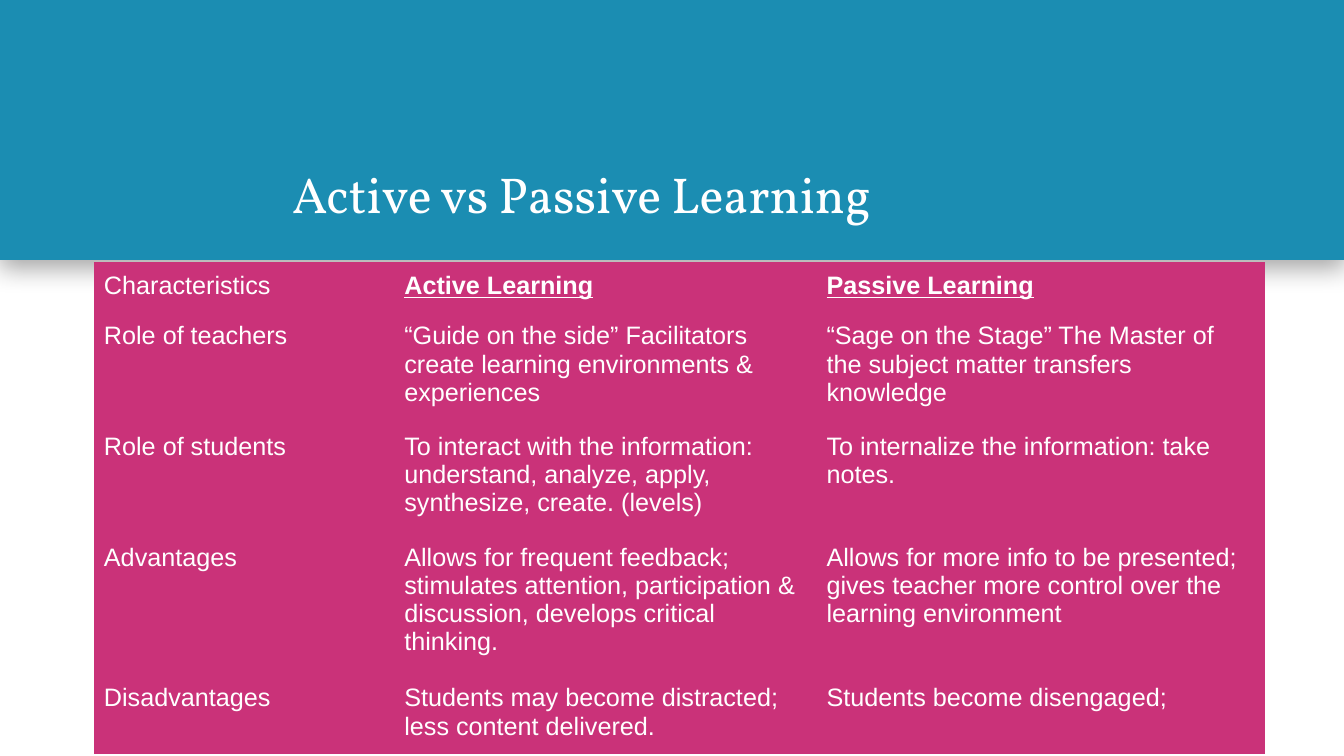
"""Build a slide comparing active and passive learning in a table."""
import lxml.etree
import pptx
import pptx.dml.color
import pptx.enum.shapes
import pptx.enum.text
import pptx.oxml
import pptx.oxml.ns
import pptx.util

Cm = pptx.util.Cm
Pt = pptx.util.Pt
RGBColor = pptx.dml.color.RGBColor

BLUE = RGBColor(0x1B, 0x8D, 0xB2)
PINK = RGBColor(0xCA, 0x32, 0x79)
WHITE = RGBColor(0xFF, 0xFF, 0xFF)

SLIDE_W, SLIDE_H = Cm(33.87), Cm(19.05)
COLUMN_WIDTHS = [7.57, 10.64, 11.3]
ROW_HEIGHTS = [1.2, 2.6, 2.6, 3.3, 1.9]
ROWS = [
    ("Characteristics", "Active Learning", "Passive Learning"),
    ("Role of teachers",
     "“Guide on the side” Facilitators create learning environments & experiences",
     "“Sage on the Stage” The Master of the subject matter transfers knowledge"),
    ("Role of students",
     "To interact with the information: understand, analyze, apply, synthesize, create. (levels)",
     "To internalize the information: take notes."),
    ("Advantages",
     "Allows for frequent feedback; stimulates attention, participation & discussion, "
     "develops critical thinking.",
     "Allows for more info to be presented; gives teacher more control over the "
     "learning environment"),
    ("Disadvantages",
     "Students may become distracted; less content delivered.",
     "Students become disengaged;"),
]


def style_run(r, name, size):
    """Give a run its font, size and white colour."""
    r.font.name = name
    r.font.size = Pt(size)
    r.font.color.rgb = WHITE


def add_shadow(sp):
    """Put a soft shadow below a shape."""
    sp.shadow.inherit = False
    effects = sp._element.spPr.find(pptx.oxml.ns.qn("a:effectLst"))
    effects.append(pptx.oxml.parse_xml(
        f'<a:outerShdw {pptx.oxml.ns.nsdecls("a")} blurRad="{Pt(18)}" dist="{Pt(5)}" '
        'dir="5400000" algn="t" rotWithShape="0"><a:srgbClr val="000000">'
        '<a:alpha val="35000"/></a:srgbClr></a:outerShdw>'))


def add_header(s, left, top, width, height):
    """Draw the header band with its title at the bottom."""
    sp = s.shapes.add_shape(
        pptx.enum.shapes.MSO_SHAPE.RECTANGLE, left, top, width, height)
    sp.fill.solid()
    sp.fill.fore_color.rgb = BLUE
    sp.line.fill.background()
    add_shadow(sp)

    box = s.shapes.add_textbox(
        left + Cm(7.11), top + Cm(1.12), width - Cm(9.43), height - Cm(1.88))
    tf = box.text_frame
    tf.word_wrap = True
    tf.vertical_anchor = pptx.enum.text.MSO_ANCHOR.BOTTOM
    p = tf.paragraphs[0]
    p.text = "Active vs Passive Learning"
    p.line_spacing = 0.9
    style_run(p.runs[0], "Vollkorn", 36)


def add_comparison(s, left, top, width, height):
    """Draw the comparison table."""
    table = s.shapes.add_table(
        len(ROWS), len(COLUMN_WIDTHS), left, top, width, height).table
    for column, column_width in zip(table.columns, COLUMN_WIDTHS):
        column.width = Cm(column_width)
    for i, (row, texts) in enumerate(zip(table.rows, ROWS)):
        row.height = Cm(ROW_HEIGHTS[i])
        for j, (cell, text) in enumerate(zip(row.cells, texts)):
            cell.fill.solid()
            cell.fill.fore_color.rgb = PINK
            cell.margin_left = cell.margin_right = Cm(0.25)
            cell.margin_top = cell.margin_bottom = Cm(0.25)
            cell.text_frame.text = text
            r = cell.text_frame.paragraphs[0].runs[0]
            style_run(r, "Arial", 18)
            r.font.bold = r.font.underline = i == 0 and j > 0
            add_borders(cell)


def add_borders(cell):
    """Turn off the borders of a cell."""
    tcPr = cell._tc.get_or_add_tcPr()
    for i, side in enumerate(("lnL", "lnR", "lnT", "lnB")):
        ln = lxml.etree.Element(pptx.oxml.ns.qn(f"a:{side}"))
        lxml.etree.SubElement(ln, pptx.oxml.ns.qn("a:noFill"))
        tcPr.insert(i, ln)


def main():
    """Build the slide and save it."""
    prs = pptx.Presentation()
    prs.slide_width, prs.slide_height = SLIDE_W, SLIDE_H
    s = prs.slides.add_slide(prs.slide_layouts[6])
    add_header(s, 0, 0, SLIDE_W, Cm(6.55))
    add_comparison(
        s, Cm(2.37), Cm(6.6), Cm(sum(COLUMN_WIDTHS)), Cm(sum(ROW_HEIGHTS)))
    prs.save("out.pptx")


if __name__ == "__main__":
    main()
